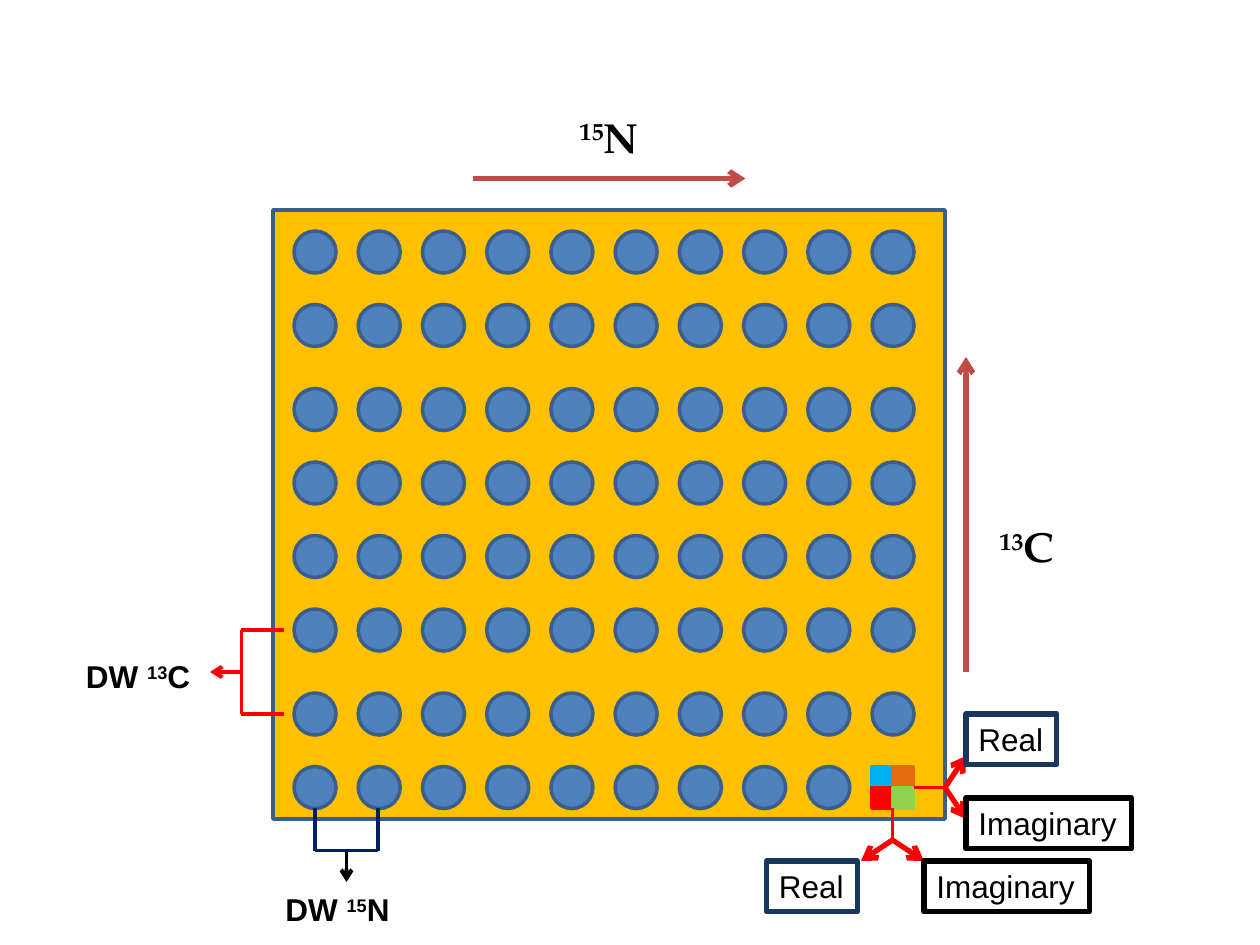
from lxml import etree
from pptx import Presentation
from pptx import util as u
from pptx.dml.color import RGBColor as Rgb
from pptx.enum import shapes as s, text as t
from pptx.oxml import ns

HEX = {"plate": "FFC000", "dot": "4F81BD", "edge": "3A5F8C", "axis": "BF4C48",
       "red": "FF0000", "green": "92D050", "sky": "00B0F0", "orange": "E46C0A",
       "navy": "002060", "frame": "17375E", "black": "000000"}
INK = {name: Rgb.from_string(code) for name, code in HEX.items()}
SERIF, SANS = "TeX Gyre Pagella", "Arial"

deck = Presentation()
deck.slide_width, deck.slide_height = u.Pt(720), u.Pt(540)
page = deck.slides.add_slide(deck.slide_layouts[6]).shapes


def line(home, x1, y1, x2, y2, ink, wide=2.25, head=False):
    link = home.add_connector(s.MSO_CONNECTOR.STRAIGHT,
                              u.Pt(x1), u.Pt(y1), u.Pt(x2), u.Pt(y2))
    link.line.color.rgb = INK[ink]
    link.line.width = u.Pt(wide)
    if head:
        etree.SubElement(link.line._get_or_add_ln(), ns.qn("a:tailEnd"), type="arrow")
    etree.SubElement(link._element.spPr, ns.qn("a:effectLst"))


def label(home, x, y, w, h, parts, face=SANS, size=18, bold=True, frame=None):
    """Each part is a text and whether it is raised."""
    box = home.add_textbox(u.Pt(x), u.Pt(y), u.Pt(w), u.Pt(h))
    if frame:
        box.line.color.rgb = INK[frame]
        box.line.width = u.Pt(3)
    body = box.text_frame
    body.word_wrap = False
    body.auto_size = t.MSO_AUTO_SIZE.SHAPE_TO_FIT_TEXT
    para = body.paragraphs[0]
    para.font.name, para.font.size, para.font.bold = face, u.Pt(size), bold
    para.font.color.rgb = INK["black"]
    for words, high in parts:
        run = para.add_run()
        run.text = words
        if high:
            run._r.get_or_add_rPr().set("baseline", "30000")


# Plate, rows of dots, and the four-part cell in the last place
COLS, LEFT, STEP, DOT, HALF = 10, 168, 36.7, 24, 12
TOPS = [132, 174, 222, 264, 306, 348, 396, 438]
RECT, OVAL = s.MSO_SHAPE.RECTANGLE, s.MSO_SHAPE.OVAL
marks = [(page, RECT, 156, 120, 384, 348, "plate", "edge")]
for top in TOPS:
    row = page.add_group_shape().shapes
    count = COLS - 1 if top == TOPS[-1] else COLS
    marks += [(row, OVAL, LEFT + col * STEP, top, DOT, DOT, "dot", "edge")
              for col in range(count)]
cell = page.add_group_shape().shapes
for i, ink in enumerate(["sky", "orange", "red", "green"]):
    marks.append((cell, RECT, 498 + i % 2 * HALF, TOPS[-1] + i // 2 * HALF,
                  HALF, HALF, ink, ink))
for home, kind, x, y, w, h, fill, edge in marks:
    mark = home.add_shape(kind, u.Pt(x), u.Pt(y), u.Pt(w), u.Pt(h))
    mark.shadow.inherit = False
    mark.fill.solid()
    mark.fill.fore_color.rgb = INK[fill]
    mark.line.color.rgb = INK[edge]
    mark.line.width = u.Pt(2)
# The plate lies behind the groups of dots
plate = page[-1]._element
page[0]._element.addprevious(plate)

# Axes
line(page, 270, 102, 426, 102, "axis", 3, True)
label(page, 324, 60, 51, 36, [("15", True), ("N", False)], SERIF, 24)
line(page, 552, 384, 552, 204, "axis", 3, True)
label(page, 564, 294, 48, 36, [("13", True), ("C", False)], SERIF, 24)

# Forks from the cell: stem start, fork point, arrow tips, boxes
forks = [((510, 462), (510, 480), [(492, 492), (528, 492)], [(438, 492), (528, 492)]),
         ((522, 450), (540, 450), [(552, 432), (552, 468)], [(552, 408), (552, 456)])]
for start, fork, tips, spots in forks:
    group = page.add_group_shape().shapes
    line(group, *start, *fork, "red")
    for tip in tips:
        line(group, *fork, *tip, "red", 3, True)
    kinds = [("Real", 52, "frame"), ("Imaginary", 94.5, "black")]
    for spot, (word, wide, frame) in zip(spots, kinds):
        label(group, *spot, wide, 29, [(word, False)], bold=False, frame=frame)

# Dwell brackets: two legs, a bar, an arrow and a label
brackets = [
    ([(180, 462, 180, 486), (216, 462, 216, 486), (180, 486, 216, 486)], "navy",
     (198, 486, 198, 504), "black", (156, 505), "15", "N"),
    ([(162, 360, 138, 360), (162, 408, 138, 408), (138, 360, 138, 408)], "red",
     (138, 384, 120, 384), "red", (42, 372), "13", "C")]
for sides, ink, arrow, tint, spot, mass, atom in brackets:
    group = page.add_group_shape().shapes
    for side in sides:
        line(group, *side, ink)
    line(group, *arrow, tint, head=True)
    label(group, *spot, 76, 29, [("DW ", False), (mass, True), (atom, False)])

deck.save("out.pptx")
